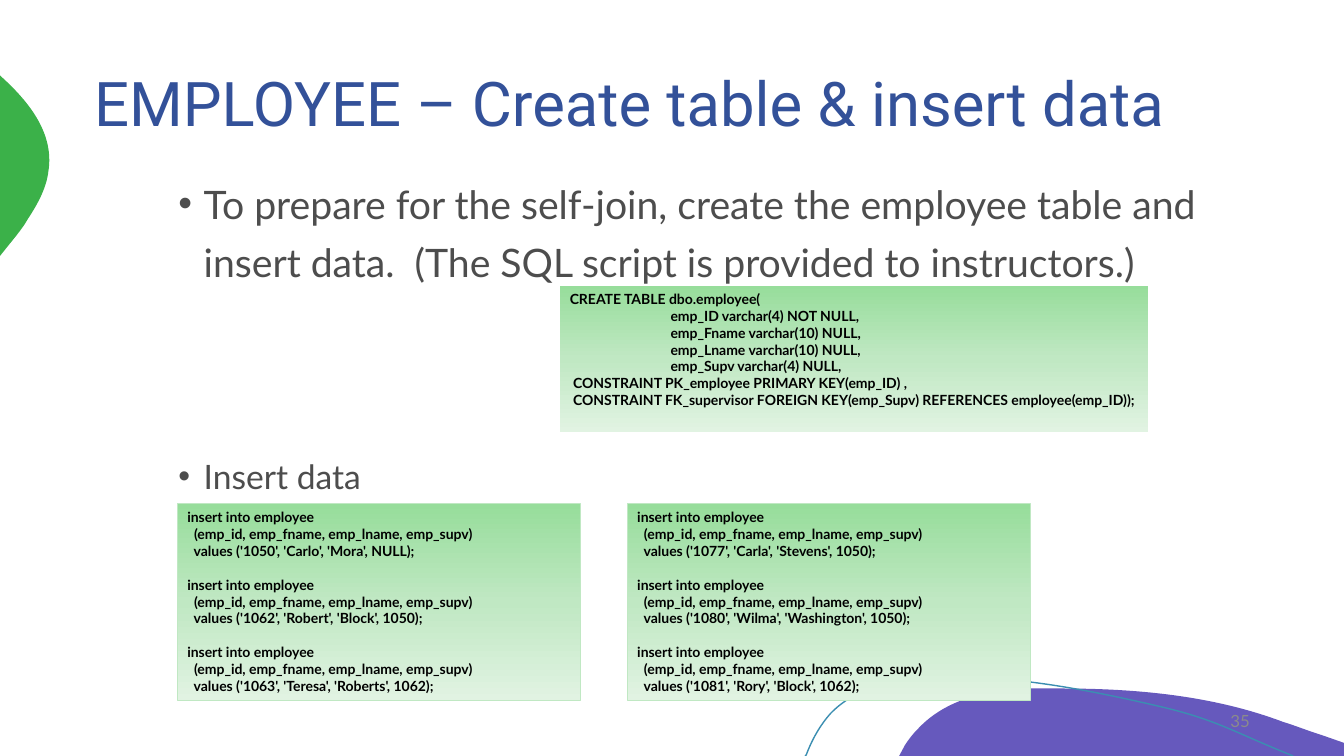
from copy import deepcopy

from lxml.etree import SubElement
from pptx import Presentation
from pptx.dml.color import RGBColor
from pptx.enum.shapes import MSO_SHAPE
from pptx.enum.text import MSO_ANCHOR, MSO_AUTO_SIZE, PP_ALIGN
from pptx.oxml.ns import qn
from pptx.util import Cm, Pt

# Outlines in cm: a pair is a straight step, six numbers a Bézier step.
WAVE = [(26.77, 17.35), (28.65, 17.35, 30.58, 17.53, 32.33, 18.19),
        (32.66, 18.29, 32.97, 18.42, 33.3, 18.52), (33.87, 18.72),
        (33.87, 19.05), (22.66, 19.05), (22.81, 18.77),
        (22.91, 18.62, 23.01, 18.49, 23.14, 18.36),
        (23.85, 17.6, 24.94, 17.37, 25.98, 17.35),
        (26.24, 17.35, 26.5, 17.35, 26.77, 17.35)]
LEAF = [(0, 1.9), (0.03, 1.93), (0.76, 2.59, 1.37, 3.38, 1.22, 4.32),
        (1.17, 4.75, 0.94, 5.16, 0.69, 5.54),
        (0.61, 5.69, 0.43, 5.92, 0.2, 6.2), (0, 6.45)]
ARC = [(20.29, 19.05), (20.32, 19.02),
       (20.47, 18.62, 20.68, 18.26, 20.93, 17.98),
       (21.59, 17.3, 22.58, 17.09, 23.52, 17.07), (24.26, 17.07),
       (25.96, 17.07, 27.94, 17.5, 29.34, 17.83),
       (30.71, 18.16, 31.14, 18.47, 32.59, 19.05)]

TABLE = [
    "CREATE TABLE dbo.employee(",
    "\temp_ID varchar(4) NOT NULL,",
    "\temp_Fname varchar(10) NULL,",
    "\temp_Lname varchar(10) NULL,",
    "\temp_Supv varchar(4) NULL,",
    " CONSTRAINT PK_employee PRIMARY KEY(emp_ID) ,",
    " CONSTRAINT FK_supervisor FOREIGN KEY(emp_Supv) REFERENCES employee(emp_ID));",
]
STAFF = [
    ["'1050', 'Carlo', 'Mora', NULL", "'1062', 'Robert', 'Block', 1050",
     "'1063', 'Teresa', 'Roberts', 1062"],
    ["'1077', 'Carla', 'Stevens', 1050", "'1080', 'Wilma', 'Washington', 1050",
     "'1081', 'Rory', 'Block', 1062"],
]
POINTS = [("To prepare for the self-join, create the employee table and insert data."
           "  (The SQL script is provided to instructors.)", 28, 10),
          ("Insert data", 24, 114)]


def color(code):
    return RGBColor.from_string(code)


def bend(shape, steps):
    """Turn the straight segments of six-number steps into Bézier curves."""
    lines = list(shape.element.iter(qn("a:lnTo")))
    for line, step in zip(lines, steps[1:]):
        if len(step) == 2:
            continue
        curve = SubElement(line.getparent(), qn("a:cubicBezTo"))
        for x, y in zip(step[::2], step[1::2]):
            SubElement(curve, qn("a:pt"), x=str(Cm(x) - shape.left),
                       y=str(Cm(y) - shape.top))
        line.getparent().replace(line, curve)


class Deck:
    head, body = "Roboto", "Lato"
    blue, gray, pale = "335199", "4D4D4D", "8B8B8B"
    greens = ("97DD9B", "C0E8C3", "E1F3E2")

    def __init__(self):
        self.show = Presentation()
        self.show.slide_width, self.show.slide_height = Cm(33.87), Cm(19.05)
        self.slide = self.show.slides.add_slide(self.show.slide_layouts[1])
        self.shapes = self.slide.shapes

    def style(self, para, size, ink, font=None, bold=False):
        for run in para.runs:
            run.font.size, run.font.bold = Pt(size), bold
            run.font.name = font or self.body
            run.font.color.rgb = color(ink)

    def place(self, holder, left, top, width, height):
        """Move a placeholder and bring it to the front."""
        holder.left, holder.top = Cm(left), Cm(top)
        holder.width, holder.height = Cm(width), Cm(height)
        holder.text_frame.auto_size = MSO_AUTO_SIZE.NONE
        holder.element.getparent().append(holder.element)
        return holder.text_frame

    def title(self, text, *box):
        frame = self.place(self.shapes.title, *box)
        frame.text = text
        frame.vertical_anchor = MSO_ANCHOR.MIDDLE
        para = frame.paragraphs[0]
        para.alignment, para.line_spacing = PP_ALIGN.LEFT, 0.9
        self.style(para, 44, self.blue, self.head)

    def bullets(self, items, *box):
        frame = self.place(self.slide.placeholders[1], *box)
        frame.text = "\n".join(text for text, _, _ in items)
        for para, (_, size, gap) in zip(frame.paragraphs, items):
            para.line_spacing, para.space_before = 1.25, Pt(gap)
            props = para._p.get_or_add_pPr()
            props.set("marL", str(Cm(0.64)))
            props.set("indent", str(Cm(-0.64)))
            self.style(para, size, self.gray)

    def outline(self, steps, fill=None, line=None):
        spots = [(Cm(step[-2]), Cm(step[-1])) for step in steps]
        pen = self.shapes.build_freeform(*spots[0])
        pen.add_line_segments(spots[1:], close=fill is not None)
        shape = pen.convert_to_shape()
        bend(shape, steps)
        shape.shadow.inherit = False
        if fill:
            shape.fill.solid()
            shape.fill.fore_color.rgb = color(fill)
            shape.line.fill.background()
        else:
            shape.fill.background()
            shape.line.color.rgb = color(line)
            shape.line.width = Pt(1)

    def code(self, lines, left, top, width, height, edge=True):
        shape = self.shapes.add_shape(MSO_SHAPE.RECTANGLE, Cm(left), Cm(top),
                                      Cm(width), Cm(height))
        shape.shadow.inherit = False
        self.shade(shape)
        if edge:
            shape.line.color.rgb = color(self.greens[1])
            shape.line.width = Pt(0.75)
        else:
            shape.line.fill.background()
        frame = shape.text_frame
        frame.word_wrap, frame.vertical_anchor = True, MSO_ANCHOR.TOP
        frame.text = "\n".join(lines)
        for i, para in enumerate(frame.paragraphs):
            para.alignment = PP_ALIGN.LEFT
            para._p.get_or_add_pPr().set("defTabSz", str(Cm(2.54)))
            if i and para.text.startswith("insert"):
                para.space_before = Pt(12)
            self.style(para, 10, "000000", bold=True)

    def shade(self, shape):
        """Fill with the three greens from top to bottom."""
        fill = shape.fill
        fill.gradient()
        fill.gradient_angle = 270
        last = list(shape.element.iter(qn("a:gs")))[-1]
        last.addprevious(deepcopy(last))
        for i, (stop, code) in enumerate(zip(fill.gradient_stops, self.greens)):
            stop.position = i / 2
            stop.color.rgb = color(code)

    def number(self, text, left, top, width, height):
        frame = self.shapes.add_textbox(Cm(left), Cm(top), Cm(width),
                                        Cm(height)).text_frame
        frame.word_wrap, frame.vertical_anchor = True, MSO_ANCHOR.MIDDLE
        frame.text = text
        frame.paragraphs[0].alignment = PP_ALIGN.RIGHT
        self.style(frame.paragraphs[0], 12, self.pale)


def main():
    deck = Deck()
    deck.outline(WAVE, fill="6659BD")
    deck.outline(LEAF, fill="3BB149")
    deck.outline(ARC, line="3B8EB1")
    deck.title("EMPLOYEE – Create table & insert data", 2.12, 0.56, 29.63, 4.23)
    deck.bullets(POINTS, 4.24, 4.11, 27.52, 13.55)
    deck.code(TABLE, 14.11, 7.2, 14.82, 3.68, edge=False)
    for i, rows in enumerate(STAFF):
        lines = [line for row in rows for line in (
            "insert into employee",
            "  (emp_id, emp_fname, emp_lname, emp_supv)",
            f"  values ({row});")]
        deck.code(lines, 4.47 + 11.34 * i, 12.7, 10.16, 4.95)
    deck.number("35", 24.13, 17.66, 7.62, 1.01)
    deck.show.save("out.pptx")


if __name__ == "__main__":
    main()
